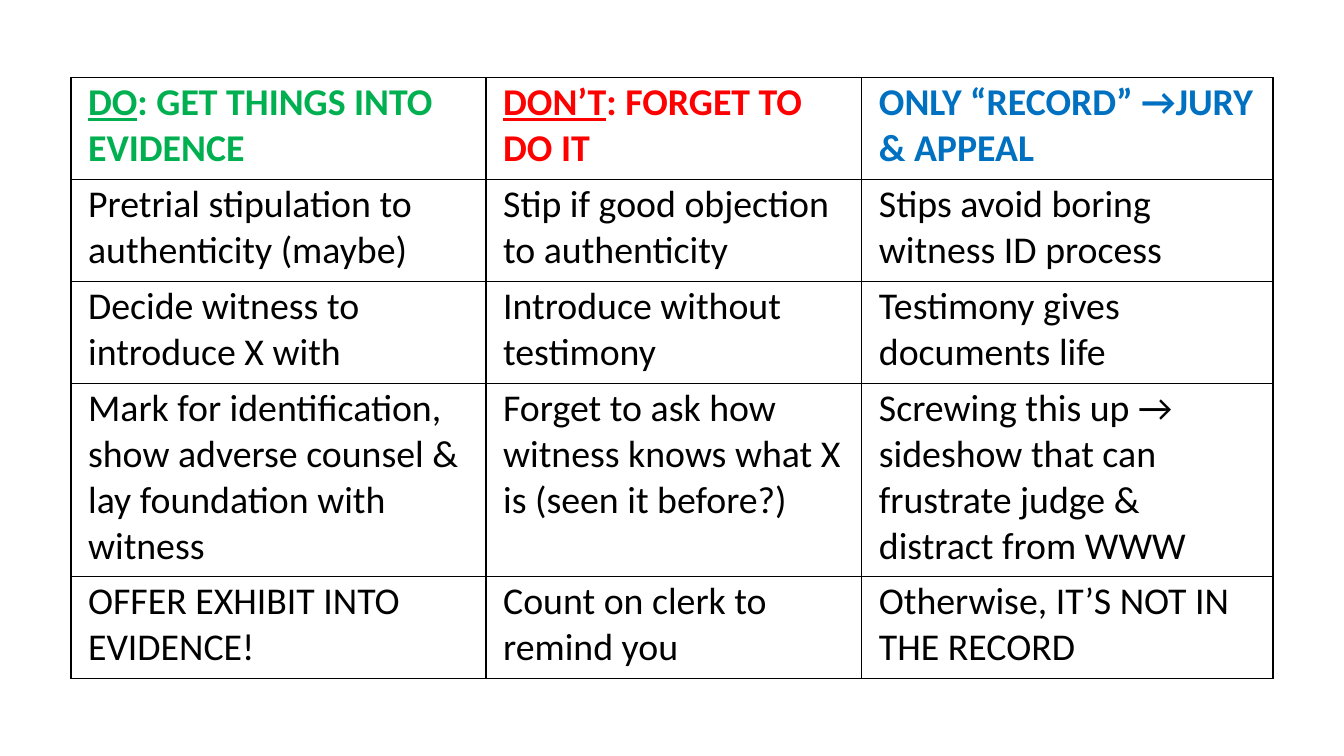
"""Build a slide with a table of do's and don'ts for getting exhibits into evidence."""
import lxml.etree
import pptx
import pptx.dml.color
import pptx.oxml.ns
import pptx.util

Cm = pptx.util.Cm
RGBColor = pptx.dml.color.RGBColor

GREEN = RGBColor(0x00, 0xB0, 0x50)
RED = RGBColor(0xFF, 0x00, 0x00)
BLUE = RGBColor(0x00, 0x70, 0xC0)
BLACK = RGBColor(0x00, 0x00, 0x00)
WHITE = RGBColor(0xFF, 0xFF, 0xFF)

HEADINGS = [
    ("DO", ": GET THINGS INTO EVIDENCE", GREEN),
    ("DON’T", ": FORGET TO DO IT", RED),
    ("", "ONLY “RECORD” →JURY & APPEAL", BLUE),
]
ADVICE = [
    ("Pretrial stipulation to authenticity (maybe)",
     "Stip if good objection to authenticity",
     "Stips avoid boring witness ID process"),
    ("Decide witness to introduce X with",
     "Introduce without testimony",
     "Testimony gives documents life"),
    ("Mark for identification, show adverse counsel & lay foundation with witness",
     "Forget to ask how witness knows what X is (seen it before?)",
     "Screwing this up → sideshow that can frustrate judge & distract from WWW"),
    ("OFFER EXHIBIT INTO EVIDENCE!",
     "Count on clerk to remind you",
     "Otherwise, IT’S NOT IN THE RECORD"),
]
COLUMN_WIDTHS = [Cm(10.46), Cm(9.47), Cm(10.36)]
ROW_HEIGHTS = [Cm(2.57), Cm(2.57), Cm(2.57), Cm(4.86), Cm(2.57)]
CELL_FORMAT = {
    "margin_left": Cm(0.43),
    "margin_top": Cm(0.05),
    "margin_right": Cm(0.43),
    "margin_bottom": Cm(0),
}


def add_run(paragraph, text, color, bold=False, underline=False):
    run = paragraph.add_run()
    run.text = text
    font_format = {"name": "Calibri", "size": pptx.util.Pt(27), "bold": bold, "underline": underline}
    for name, value in font_format.items():
        setattr(run.font, name, value)
    run.font.color.rgb = color


def add_borders(cell):
    qn = pptx.oxml.ns.qn
    properties = cell._tc.get_or_add_tcPr()
    for side in ("lnL", "lnR", "lnT", "lnB"):
        line = lxml.etree.SubElement(properties, qn(f"a:{side}"), w=str(pptx.util.Pt(1)))
        fill = lxml.etree.SubElement(line, qn("a:solidFill"))
        lxml.etree.SubElement(fill, qn("a:srgbClr"), val=str(BLACK))


presentation = pptx.Presentation()
presentation.slide_width = Cm(33.87)
presentation.slide_height = Cm(19.05)
slide = presentation.slides.add_slide(presentation.slide_layouts[6])

table = slide.shapes.add_table(
    len(ROW_HEIGHTS), len(COLUMN_WIDTHS), Cm(1.79), Cm(1.96), sum(COLUMN_WIDTHS), sum(ROW_HEIGHTS)
).table
table.horz_banding = False
for column, width in zip(table.columns, COLUMN_WIDTHS):
    column.width = width
for row, height in zip(table.rows, ROW_HEIGHTS):
    row.height = height

for cell in table.iter_cells():
    for name, value in CELL_FORMAT.items():
        setattr(cell, name, value)
    add_borders(cell)
    cell.fill.solid()
    cell.fill.fore_color.rgb = WHITE

for column_index, (keyword, rest, color) in enumerate(HEADINGS):
    paragraph = table.cell(0, column_index).text_frame.paragraphs[0]
    if keyword:
        add_run(paragraph, keyword, color, bold=True, underline=True)
    add_run(paragraph, rest, color, bold=True)

for row_index, texts in enumerate(ADVICE, start=1):
    for column_index, text in enumerate(texts):
        add_run(table.cell(row_index, column_index).text_frame.paragraphs[0], text, BLACK)

presentation.save("out.pptx")
